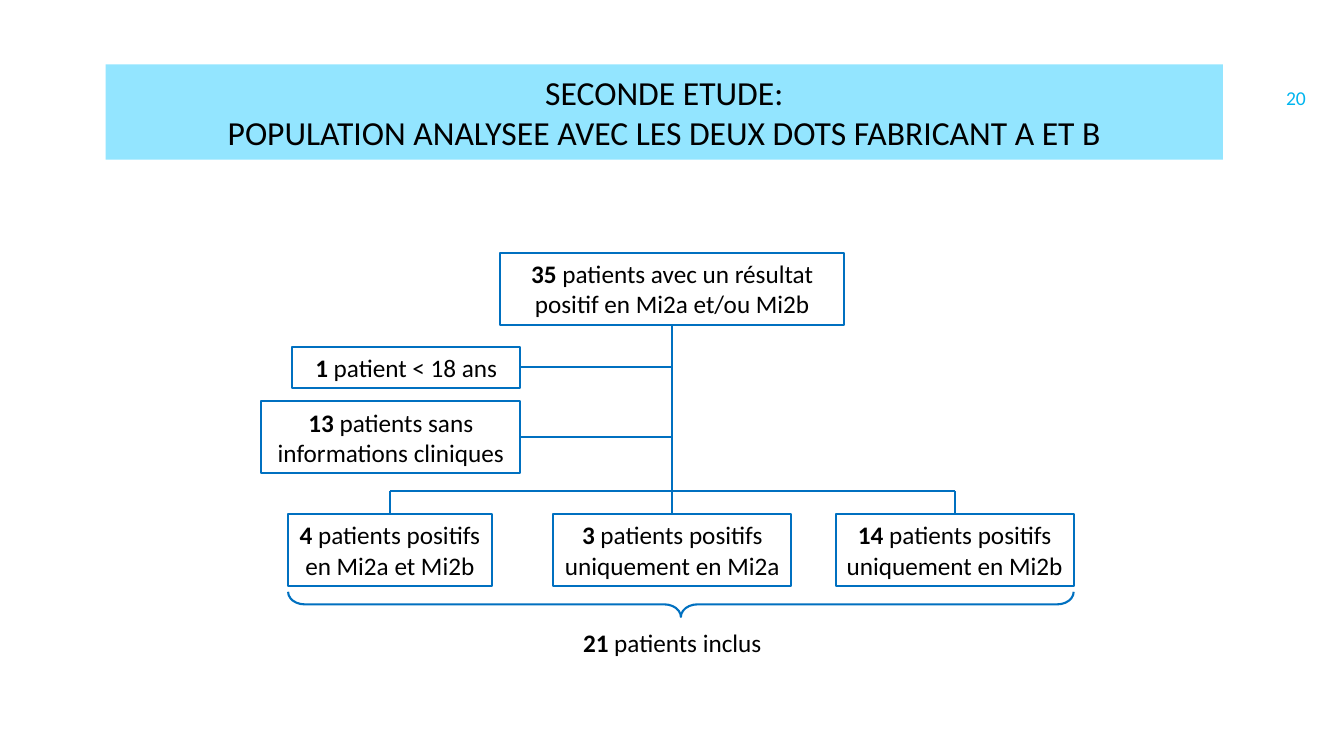
from lxml import etree
from pptx import Presentation
from pptx.dml.color import RGBColor
from pptx.enum import shapes, text
from pptx.oxml import ns
from pptx.util import Pt

BLUE = "0070C0"
LINE_HEIGHT = 22
INSET = 3.6


def color(value):
    return RGBColor.from_string(value)


def write(box, words, lead="", size=18, ink="000000", align="CENTER", wrap=True):
    """Fill a shape with one paragraph per line of words, after a bold lead."""
    frame = box.text_frame
    frame.word_wrap = wrap
    frame.vertical_anchor = text.MSO_ANCHOR.MIDDLE
    for index, line in enumerate(words.split("\n")):
        para = frame.paragraphs[0] if index == 0 else frame.add_paragraph()
        para.alignment = getattr(text.PP_ALIGN, align)
        parts = [(line, False)]
        if lead and index == 0:
            parts = [(lead, True), (" " + line, False)]
        for part, bold in parts:
            span = para.add_run()
            span.text = part
            span.font.name = "Calibri"
            span.font.size = Pt(size)
            span.font.bold = bold
            span.font.color.rgb = color(ink)


def add_shape(page, kind, left, top, width, height, fill=None, line=None):
    shape = page.shapes.add_shape(kind, Pt(left), Pt(top), Pt(width), Pt(height))
    shape.shadow.inherit = False
    if fill:
        shape.fill.solid()
        shape.fill.fore_color.rgb = color(fill)
    else:
        shape.fill.background()
    if line:
        shape.line.color.rgb = color(line)
        shape.line.width = Pt(1.5)
    else:
        shape.line.fill.background()
    return shape


def add_label(page, left, top, width, height, words, **format):
    label = page.shapes.add_textbox(Pt(left), Pt(top), Pt(width), Pt(height))
    write(label, words, **format)


def add_count(page, center, top, width, lead, words, rows=2, wrap=True):
    """Place an outlined box of patients, centred on a given x."""
    height = rows * LINE_HEIGHT + 2 * INSET
    box = add_shape(page, shapes.MSO_SHAPE.RECTANGLE, center - width / 2, top,
                    width, height, line=BLUE)
    write(box, words, lead=lead, wrap=wrap)
    return box


def add_line(page, x1, y1, x2, y2, begin=None, end=None):
    """Draw a line; begin and end are (box, side) pairs to join."""
    line = page.shapes.add_connector(shapes.MSO_CONNECTOR.STRAIGHT,
                                     Pt(x1), Pt(y1), Pt(x2), Pt(y2))
    line.line.color.rgb = color(BLUE)
    line.line.width = Pt(1.5)
    etree.SubElement(line._element.spPr, ns.qn("a:effectLst"))
    if begin:
        line.begin_connect(*begin)
    if end:
        line.end_connect(*end)


def add_title(page, left, top, width, height):
    banner = add_shape(page, shapes.MSO_SHAPE.RECTANGLE, left, top, width, height,
                       fill="93E5FF")
    write(banner, "SECONDE ETUDE:\n"
          "POPULATION ANALYSEE AVEC LES DEUX DOTS FABRICANT A ET B", size=24)


def add_flowchart(page, left, top, width, height):
    trunk = left + 294
    bus = top + 170
    groups_top = top + 186.5

    root = add_count(page, trunk, top, 246, "35",
                     "patients avec un résultat positif en Mi2a et/ou Mi2b")

    exclusions_right = left + 185.5
    exclusions = [
        (67, 163, 1, "1", "patient < 18 ans"),
        (106, 185, 2, "13", "patients sans informations cliniques"),
    ]
    for offset, box_width, rows, lead, words in exclusions:
        box = add_count(page, exclusions_right - box_width / 2, top + offset,
                        box_width, lead, words, rows=rows)
        middle = top + offset + rows * LINE_HEIGHT / 2 + INSET
        add_line(page, exclusions_right, middle, trunk, middle, begin=(box, 3))

    pitch = 201.7
    groups = [
        (-1, 145.5, "4", "patients positifs\nen Mi2a et Mi2b"),
        (0, 170, "3", "patients positifs\nuniquement en Mi2a"),
        (1, 170, "14", "patients positifs\nuniquement en Mi2b"),
    ]
    for step, box_width, lead, words in groups:
        center = trunk + step * pitch
        box = add_count(page, center, groups_top, box_width, lead, words, wrap=False)
        if step == 0:
            add_line(page, trunk, bus, trunk, groups_top, begin=(root, 2), end=(box, 0))
        else:
            add_line(page, center, bus, center, groups_top, end=(box, 0))
    add_line(page, trunk - pitch, bus, trunk + pitch, bus)

    span_left = trunk - pitch - groups[0][1] / 2
    span_right = trunk + pitch + groups[-1][1] / 2
    add_brace(page, span_left, top + 242, span_right - span_left, 18)
    add_label(page, trunk - 163.5, top + height - 29, 327, 29, "patients inclus", lead="21")


def add_brace(page, left, top, width, height):
    """Draw a brace that points down, as a turned right brace."""
    shift = (width - height) / 2
    brace = add_shape(page, shapes.MSO_SHAPE.RIGHT_BRACE, left + shift, top - shift,
                      height, width, line=BLUE)
    brace.adjustments[0] = 0.655
    brace.adjustments[1] = 0.5
    brace.rotation = 90


def main():
    deck = Presentation()
    deck.slide_width, deck.slide_height = Pt(960), Pt(540)
    page = deck.slides.add_slide(deck.slide_layouts[6])
    add_label(page, 911.5, 46, 48, 48, "20", size=14, ink="00B5EF", align="LEFT")
    add_title(page, 75.5, 46, 798, 68)
    add_flowchart(page, 186.2, 180.7, 581, 292.5)
    deck.save("out.pptx")


if __name__ == "__main__":
    main()
